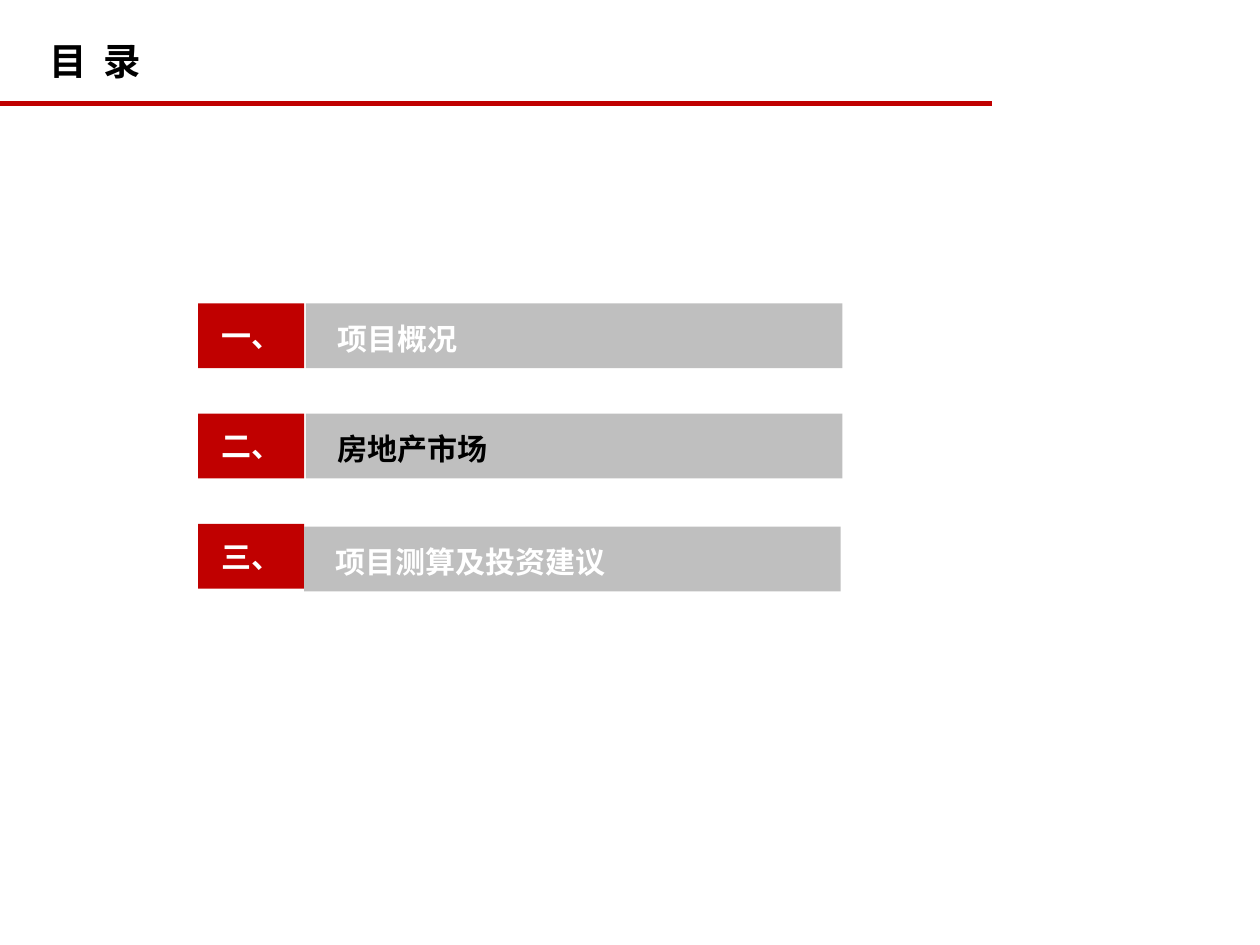
from dataclasses import dataclass

from lxml import etree
from pptx import Presentation
from pptx.dml.color import RGBColor
from pptx.enum.shapes import MSO_CONNECTOR, MSO_SHAPE
from pptx.enum.text import MSO_ANCHOR, PP_ALIGN
from pptx.oxml.ns import qn
from pptx.util import Inches, Pt

STRAIGHT = MSO_CONNECTOR.STRAIGHT
RECTANGLE = MSO_SHAPE.RECTANGLE
MIDDLE, BOTTOM = MSO_ANCHOR.MIDDLE, MSO_ANCHOR.BOTTOM
LEFT, CENTER = PP_ALIGN.LEFT, PP_ALIGN.CENTER


@dataclass(frozen=True)
class Theme:
    font: str = "Noto Sans CJK SC"
    accent: RGBColor = RGBColor(0xC0, 0x00, 0x00)
    bar: RGBColor = RGBColor(0xBF, 0xBF, 0xBF)
    light: RGBColor = RGBColor(0xFF, 0xFF, 0xFF)
    dark: RGBColor = RGBColor(0x00, 0x00, 0x00)
    title_size: int = 30
    item_size: int = 24
    rule_width: float = 4.5


THEME = Theme()
SLIDE_WIDTH, SLIDE_HEIGHT = 14, 10.5

# Number, heading, whether it is the current section, nudge of its bar
SECTIONS = [
    ("一、", "项目概况", False, (0, 0)),
    ("二、", "房地产市场", True, (0, 0)),
    ("三、", "项目测算及投资建议", False, (-0.02, 0.03)),
]


def set_text(shape, text, size, color, alignment, anchor, margins):
    """Write one bold line; margins are left, top, right, bottom in inches."""
    frame = shape.text_frame
    sides = ("margin_left", "margin_top", "margin_right", "margin_bottom")
    frame_format = dict(zip(sides, map(Inches, margins)))
    frame_format |= {"word_wrap": True, "vertical_anchor": anchor}
    for name, value in frame_format.items():
        setattr(frame, name, value)
    paragraph = frame.paragraphs[0]
    paragraph.alignment = alignment
    run = paragraph.add_run()
    run.text = text
    for name, value in {"size": Pt(size), "bold": True, "name": THEME.font}.items():
        setattr(run.font, name, value)
    run.font.color.rgb = color
    properties = run.font._element
    etree.SubElement(properties, qn("a:ea")).set("typeface", THEME.font)
    return run


def add_block(slide, box, fill):
    shape = slide.shapes.add_shape(RECTANGLE, *map(Inches, box))
    shape.shadow.inherit = False
    shape.fill.solid()
    shape.fill.fore_color.rgb = fill
    shape.line.fill.background()
    return shape


def add_header(slide, box):
    """Put the title in the box, above a rule that starts at the slide's edge."""
    left, top, width, height = box
    rule_top = Inches(top + height)
    rule = slide.shapes.add_connector(STRAIGHT, 0, rule_top, Inches(left + width), rule_top)
    rule.line.color.rgb = THEME.accent
    rule.line.width = Pt(THEME.rule_width)
    etree.SubElement(rule._element.spPr, qn("a:effectLst"))

    title_box = (left + 0.55, top + 0.42, 1.95, 0.57)
    title = slide.shapes.add_textbox(*map(Inches, title_box))
    run = set_text(title, "目 录", THEME.title_size, THEME.dark, LEFT, BOTTOM,
                   (0, 0.07, 0.14, 0.07))
    run.font._element.set("spc", "330")  # letter spacing, hundredths of a point


def add_agenda(slide, box):
    """Stack the sections in equal rows: a number block, then a heading bar."""
    left, top, width, height = box
    row_height = 0.72
    pitch = (height - row_height) / (len(SECTIONS) - 1)
    number_width, bar_offset = 1.18, 1.2
    for index, (number, heading, current, nudge) in enumerate(SECTIONS):
        row_top = top + index * pitch
        block = add_block(slide, (left, row_top, number_width, row_height), THEME.accent)
        set_text(block, number, THEME.item_size, THEME.light, CENTER, MIDDLE,
                 (0.1, 0.05, 0.1, 0.05))
        bar_box = (left + bar_offset + nudge[0], row_top + nudge[1],
                   width - bar_offset, row_height)
        bar = add_block(slide, bar_box, THEME.bar)
        set_text(bar, heading, THEME.item_size, THEME.dark if current else THEME.light,
                 LEFT, MIDDLE, (0.35, 0.1, 0.1, 0.05))


def main():
    presentation = Presentation()
    presentation.slide_width = Inches(SLIDE_WIDTH)
    presentation.slide_height = Inches(SLIDE_HEIGHT)
    slide = presentation.slides.add_slide(presentation.slide_layouts[6])
    add_header(slide, (0, 0, 11.02, 1.15))
    add_agenda(slide, (2.2, 3.37, 7.16, 3.17))
    presentation.save("out.pptx")


if __name__ == "__main__":
    main()
